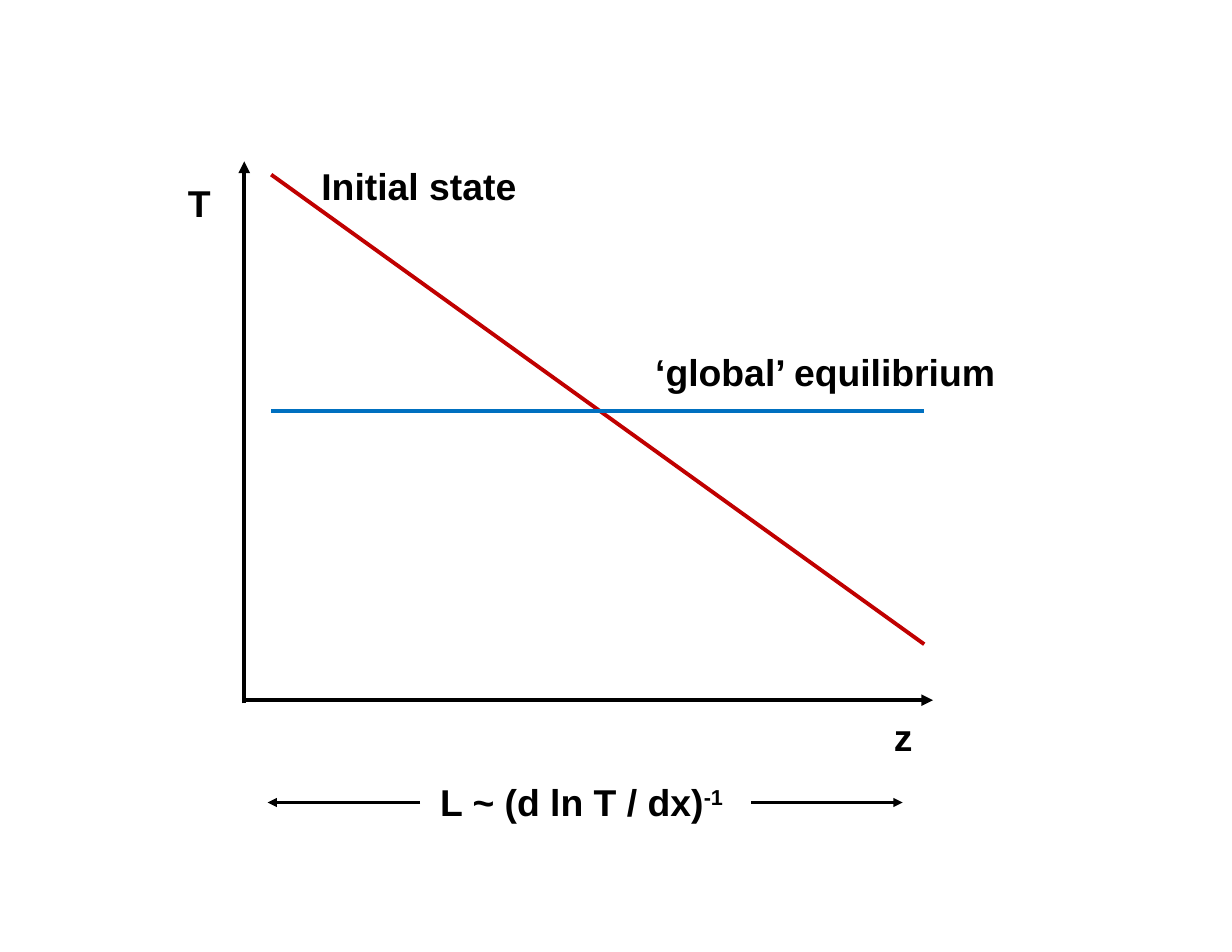
from dataclasses import dataclass

from lxml import etree
from pptx import Presentation
from pptx import util as u
from pptx.dml import color
from pptx.enum import shapes, text
from pptx.oxml import ns


@dataclass(frozen=True)
class Theme:
    font: str = "Arial"
    ink: str = "000000"
    start: str = "C00000"
    even: str = "0070C0"
    size: float = 24
    thick: float = 2.5
    thin: float = 1.5


class Sketch:
    def __init__(self, slide, theme):
        self.slide = slide
        self.theme = theme

    def line(self, x1, y1, x2, y2, tint, width):
        line = self.slide.shapes.add_connector(
            shapes.MSO_CONNECTOR.STRAIGHT,
            u.Cm(x1), u.Cm(y1), u.Cm(x2), u.Cm(y2))
        line.line.color.rgb = color.RGBColor.from_string(tint)
        line.line.width = u.Pt(width)
        etree.SubElement(line._element.spPr, ns.qn("a:effectLst"))
        return line

    def arrow(self, x1, y1, x2, y2, width):
        line = self.line(x1, y1, x2, y2, self.theme.ink, width)
        edge = line.line._get_or_add_ln()
        etree.SubElement(edge, ns.qn("a:tailEnd"), type="triangle")

    def label(self, x, y, width, words, power=""):
        box = self.slide.shapes.add_textbox(
            u.Cm(x), u.Cm(y), u.Cm(width), u.Cm(1.27))
        frame = box.text_frame
        frame.word_wrap = False
        frame.auto_size = text.MSO_AUTO_SIZE.SHAPE_TO_FIT_TEXT
        para = frame.paragraphs[0]
        self.run(para, words)
        if power:
            run = self.run(para, power)
            run._r.get_or_add_rPr().set("baseline", "30000")

    def run(self, para, words):
        run = para.add_run()
        run.text = words
        font = run.font
        font.name = self.theme.font
        font.size = u.Pt(self.theme.size)
        font.bold = True
        font.color.rgb = color.RGBColor.from_string(self.theme.ink)
        return run


def main():
    deck = Presentation()
    deck.slide_width = u.Cm(27.94)
    deck.slide_height = u.Cm(21.59)
    theme = Theme()
    plot = Sketch(deck.slides.add_slide(deck.slide_layouts[6]), theme)

    plot.arrow(5.51, 15.88, 21.16, 15.88, theme.thick)
    plot.arrow(5.54, 15.95, 5.54, 3.66, theme.thick)
    plot.label(4.01, 3.96, 1.04, "T")
    plot.label(20.02, 16.08, 0.94, "z")

    left, right = 6.15, 20.96
    plot.line(left, 3.96, right, 14.61, theme.start, theme.thick)
    plot.line(left, 9.32, right, 9.32, theme.even, theme.thick)

    plot.label(9.73, 17.55, 7.29, "L ~ (d ln T / dx)", "-1")
    for begin, end in ((17.04, 20.47), (9.53, 6.07)):
        plot.arrow(begin, 18.2, end, 18.2, theme.thin)

    plot.label(7.04, 3.58, 4.98, "Initial state")
    plot.label(14.61, 7.8, 8.31, "‘global’ equilibrium")
    deck.save("out.pptx")


if __name__ == "__main__":
    main()
